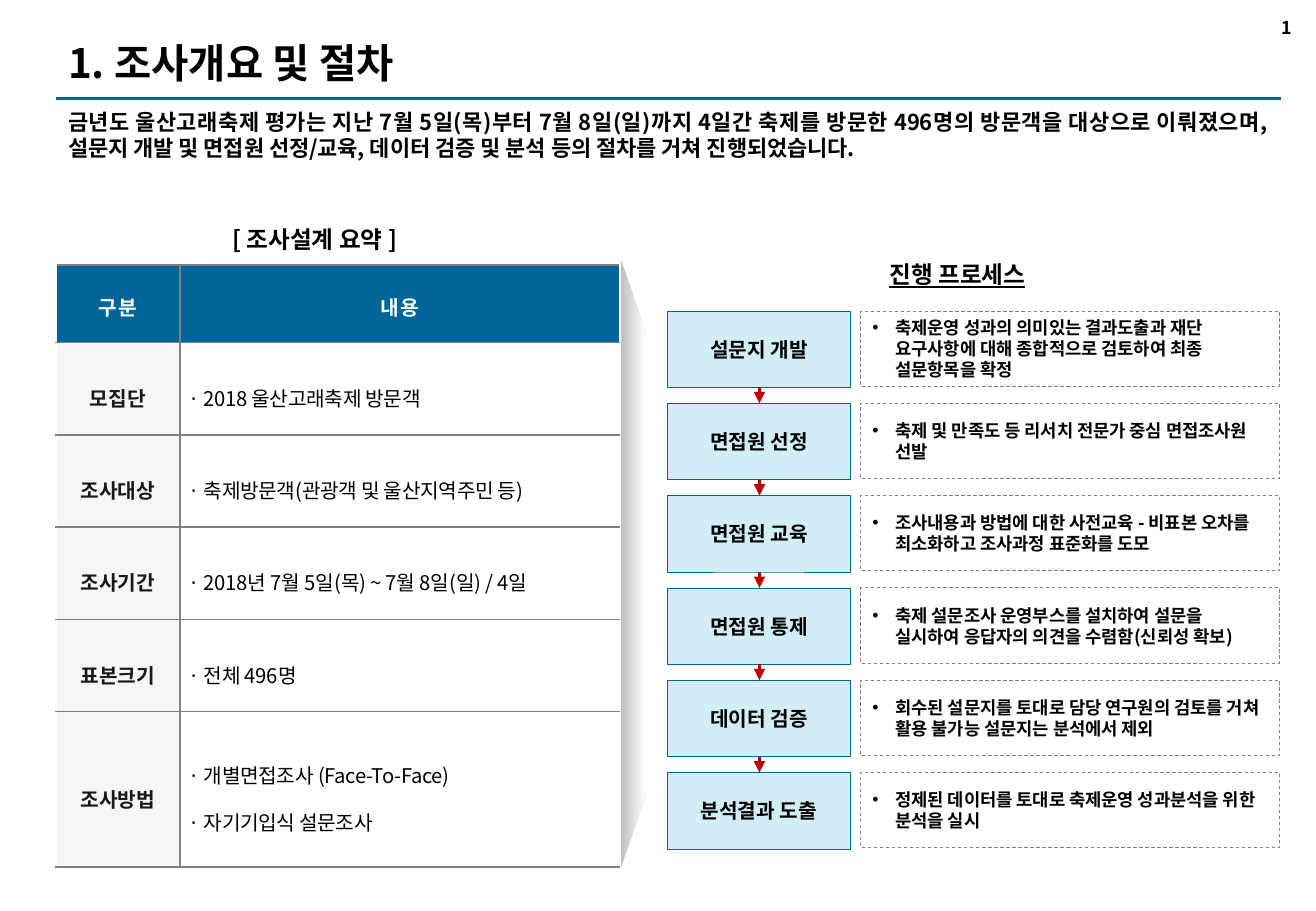
from lxml.etree import SubElement
from pptx import Presentation
from pptx.dml.color import RGBColor
from pptx.enum.dml import MSO_LINE
from pptx.enum.shapes import MSO_CONNECTOR, MSO_SHAPE
from pptx.enum.text import MSO_ANCHOR, MSO_AUTO_SIZE, PP_ALIGN
from pptx.oxml import parse_xml
from pptx.oxml.ns import nsdecls, qn
from pptx.util import Inches, Pt

FONT = "Noto Sans CJK KR"
COLORS = {
    "blue": "006699", "pale": "D1EEF7", "gray": "808080", "label": "F6F6F6",
    "ink": "191919", "black": "000000", "white": "FFFFFF", "red": "C00000",
    "silver": "C0C0C0",
}
SUMMARY = "금년도 울산고래축제 평가는 지난 7월 5일(목)부터 7월 8일(일)까지 4일간 축제를 방문한 496명의 방문객을 대상으로 이뤄졌으며, 설문지 개발 및 면접원 선정/교육, 데이터 검증 및 분석 등의 절차를 거쳐 진행되었습니다."
DESIGN = [
    ("모집단", ["· 2018 울산고래축제 방문객"]),
    ("조사대상", ["· 축제방문객(관광객 및 울산지역주민 등)"]),
    ("조사기간", ["· 2018년 7월 5일(목) ~ 7월 8일(일) / 4일"]),
    ("표본크기", ["· 전체 496명"]),
    ("조사방법", ["· 개별면접조사 (Face-To-Face)", "· 자기기입식 설문조사"]),
]
STEPS = [
    ("설문지 개발", "축제운영 성과의 의미있는 결과도출과 재단 요구사항에 대해 종합적으로 검토하여 최종 설문항목을 확정"),
    ("면접원 선정", "축제 및 만족도 등 리서치 전문가 중심 면접조사원 선발"),
    ("면접원 교육", "조사내용과 방법에 대한 사전교육 - 비표본 오차를 최소화하고 조사과정 표준화를 도모"),
    ("면접원 통제", "축제 설문조사 운영부스를 설치하여 설문을 실시하여 응답자의 의견을 수렴함(신뢰성 확보)"),
    ("데이터 검증", "회수된 설문지를 토대로 담당 연구원의 검토를 거쳐 활용 불가능 설문지는 분석에서 제외"),
    ("분석결과 도출", "정제된 데이터를 토대로 축제운영 성과분석을 위한 분석을 실시"),
]


def rgb(name):
    return RGBColor.from_string(COLORS[name])


def write(frame, lines, size, color="black", bold=True, align=PP_ALIGN.LEFT,
          spacing=1.0, tracking=0, underline=False):
    for index, line in enumerate(lines):
        paragraph = frame.add_paragraph() if index else frame.paragraphs[0]
        paragraph.alignment = align
        paragraph.line_spacing = spacing
        paragraph.space_before = Pt(0)
        run = paragraph.add_run()
        run.text = line
        font = run.font
        font.size, font.bold = Pt(size), bold
        font.color.rgb = rgb(color)
        font.name = FONT
        if underline:
            font.underline = True
        properties = run._r.get_or_add_rPr()
        SubElement(properties, qn("a:ea")).set("typeface", FONT)
        if tracking:
            properties.set("spc", str(tracking))


def set_bullet(paragraph, char=None, indent=0.0):
    properties = paragraph._p.get_or_add_pPr()
    properties.set("marL", str(Inches(indent)))
    properties.set("indent", str(-Inches(indent)))
    if char:
        SubElement(properties, qn("a:buFont")).set("typeface", "Arial")
        SubElement(properties, qn("a:buChar")).set("char", char)
    else:
        SubElement(properties, qn("a:buNone"))


def fill_placeholder(holder, box, anchor):
    holder.left, holder.top, holder.width, holder.height = map(Inches, box)
    frame = holder.text_frame
    frame.auto_size = MSO_AUTO_SIZE.NONE
    frame.word_wrap = True
    frame.vertical_anchor = anchor
    return frame


def add_label(slide, box, text, size, underline=False):
    frame = slide.shapes.add_textbox(*map(Inches, box)).text_frame
    frame.word_wrap = True
    write(frame, [text], size, align=PP_ALIGN.CENTER, underline=underline)


def add_box(slide, box, fill, line, weight):
    panel = slide.shapes.add_shape(MSO_SHAPE.RECTANGLE, *map(Inches, box))
    panel.shadow.inherit = False
    panel.fill.solid()
    panel.fill.fore_color.rgb = rgb(fill)
    panel.line.color.rgb = rgb(line)
    panel.line.width = Pt(weight)
    panel.text_frame.word_wrap = True
    panel.text_frame.vertical_anchor = MSO_ANCHOR.MIDDLE
    return panel


def add_line(slide, points, color, weight, arrow=False):
    rule = slide.shapes.add_connector(MSO_CONNECTOR.STRAIGHT, *map(Inches, points))
    rule.line.color.rgb = rgb(color)
    rule.line.width = Pt(weight)
    if arrow:
        SubElement(rule.line._get_or_add_ln(), qn("a:tailEnd")).set("type", "triangle")
    SubElement(rule._element.spPr, qn("a:effectLst"))


def set_borders(cell, sides):
    properties = cell._tc.get_or_add_tcPr()
    for side in sides:
        properties.append(parse_xml(
            f'<a:ln{side} {nsdecls("a")} w="12700"><a:solidFill>'
            f'<a:srgbClr val="{COLORS["gray"]}"/></a:solidFill></a:ln{side}>'))


def fill_cell(cell, lines, fill, sides, margins=(0.1, 0.05), **style):
    set_borders(cell, sides)
    if fill:
        cell.fill.solid()
        cell.fill.fore_color.rgb = rgb(fill)
    else:
        cell.fill.background()
    cell.margin_left = cell.margin_right = Inches(margins[0])
    cell.margin_top = cell.margin_bottom = Inches(margins[1])
    cell.vertical_anchor = MSO_ANCHOR.MIDDLE
    write(cell.text_frame, lines, 12, **style)


def add_design_table(slide):
    heights = [0.64] + [0.76] * 4 + [1.28]
    table = slide.shapes.add_table(
        len(heights), 2, Inches(0.46), Inches(2.18), Inches(4.64), Inches(sum(heights))).table
    table.first_row = table.horz_banding = False
    for column, width in zip(table.columns, (1.02, 3.62)):
        column.width = Inches(width)
    for row, height in zip(table.rows, heights):
        row.height = Inches(height)
    for column, (heading, sides) in enumerate([("구 분", "RTB"), ("내 용", "LTB")]):
        fill_cell(table.cell(0, column), [heading], "blue", sides, color="white",
                  align=PP_ALIGN.CENTER, spacing=1.2, tracking=-100)
    for row, (label, details) in enumerate(DESIGN, 1):
        fill_cell(table.cell(row, 0), [label], "label", "RTB", color="ink",
                  align=PP_ALIGN.CENTER, spacing=1.6)
        fill_cell(table.cell(row, 1), details, None, "LTB", (0.07, 0.02), bold=False,
                  align=PP_ALIGN.JUSTIFY, spacing=1.6, tracking=-20)


def add_process(slide):
    top, pitch, height = 2.56, 0.76, 0.63
    for index, (step, detail) in enumerate(STEPS):
        y = top + index * pitch
        name_box = add_box(slide, (5.49, y, 1.51, height), "pale", "blue", 0.25)
        write(name_box.text_frame, [step], 12, align=PP_ALIGN.CENTER)
        detail_box = add_box(slide, (7.08, y, 3.45, 0.62), "white", "gray", 0.5)
        detail_box.line.dash_style = MSO_LINE.DASH
        write(detail_box.text_frame, [detail], 10.5)
        paragraph = detail_box.text_frame.paragraphs[0]
        paragraph.space_after = Pt(6)
        set_bullet(paragraph, "•", 0.19)
        if index:
            add_line(slide, (6.25, y - pitch + height, 6.25, y), "red", 2.25, arrow=True)


def add_transition(slide):
    outline = slide.shapes.build_freeform(Inches(5.11), Inches(2.14))
    outline.add_line_segments(
        [(Inches(x), Inches(y)) for x, y in ((5.32, 2.76), (5.32, 6.52), (5.11, 7.14))])
    wedge = outline.convert_to_shape()
    wedge.shadow.inherit = False
    wedge.line.fill.background()
    wedge.fill.gradient()
    wedge.fill.gradient_angle = 0
    for stop, color, position in zip(wedge.fill.gradient_stops, ("silver", "white"), (0, 1)):
        stop.color.rgb = rgb(color)
        stop.position = position


def main():
    deck = Presentation()
    deck.slide_width, deck.slide_height = Inches(10.83), Inches(7.5)
    slide = deck.slides.add_slide(deck.slide_layouts[1])
    title, summary = slide.placeholders

    # Heading
    add_line(slide, (0.46, 0.81, 10.54, 0.81), "blue", 1.75)
    add_label(slide, (10.39, 0.09, 0.39, 0.28), "1", 10.5)
    title_frame = fill_placeholder(title, (0.46, 0.11, 6.3, 0.76), MSO_ANCHOR.MIDDLE)
    title_frame.margin_top = title_frame.margin_bottom = Inches(0.1)
    write(title_frame, ["1. 조사개요 및 절차"], 24, spacing=1.1)
    summary_frame = fill_placeholder(summary, (0.46, 0.84, 10.07, 0.88), MSO_ANCHOR.TOP)
    write(summary_frame, [SUMMARY], 13, align=PP_ALIGN.JUSTIFY)
    set_bullet(summary_frame.paragraphs[0])

    # Survey design
    add_label(slide, (1.67, 1.8, 1.84, 0.34), "[ 조사설계 요약 ]", 14)
    add_design_table(slide)
    add_transition(slide)

    # Process
    add_label(slide, (6.96, 2.09, 1.84, 0.34), "진행 프로세스", 14, underline=True)
    add_process(slide)
    deck.save("out.pptx")


if __name__ == "__main__":
    main()
